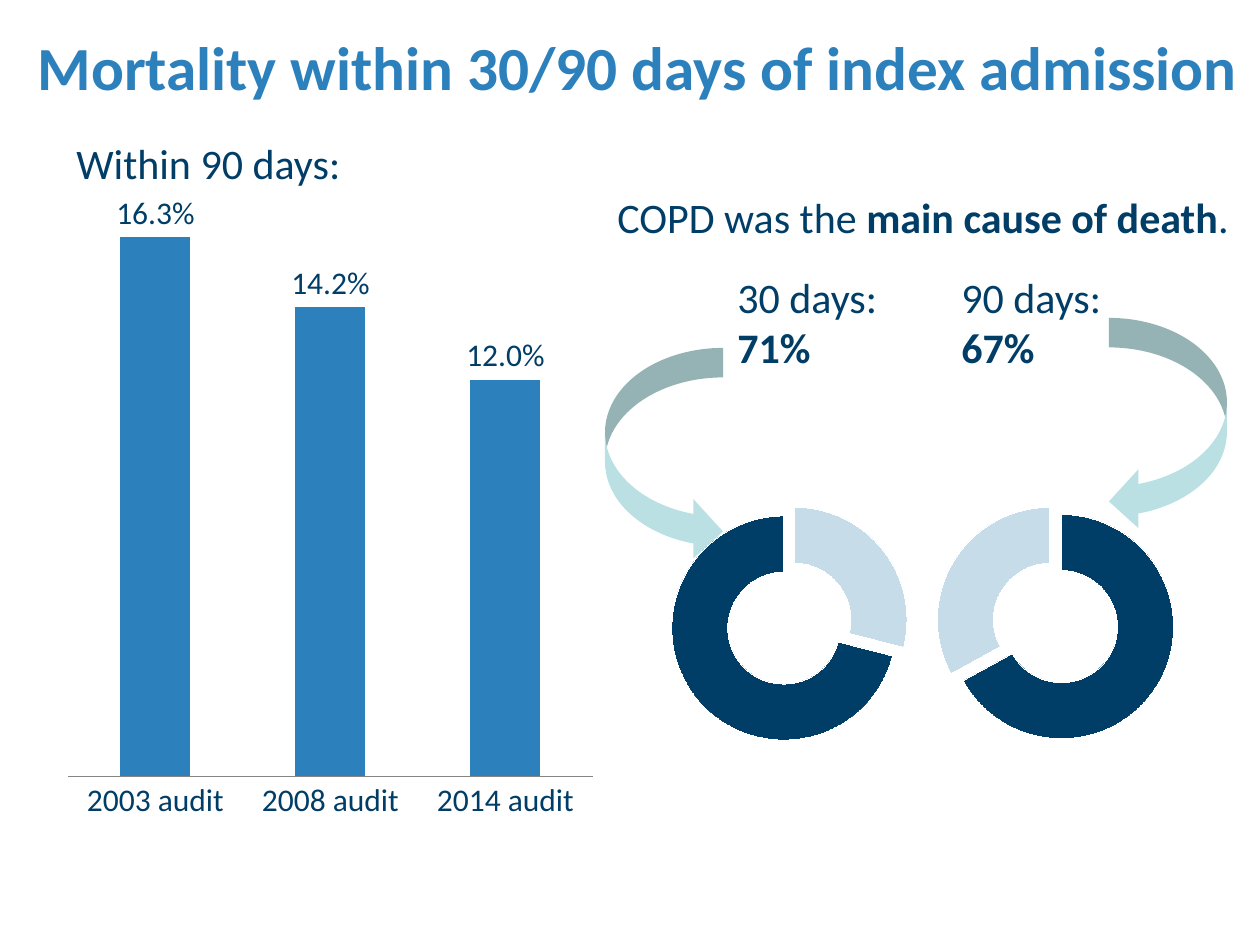
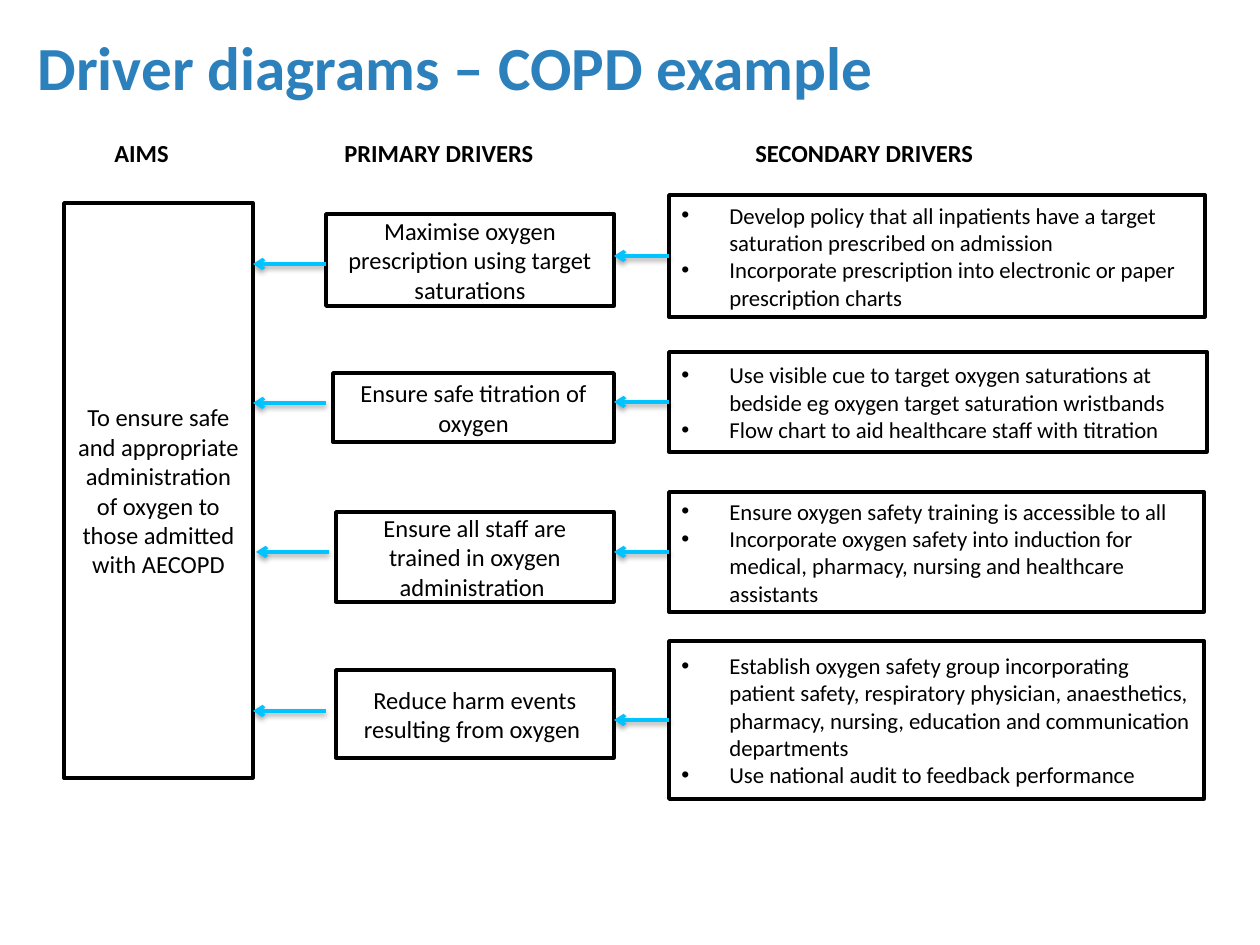
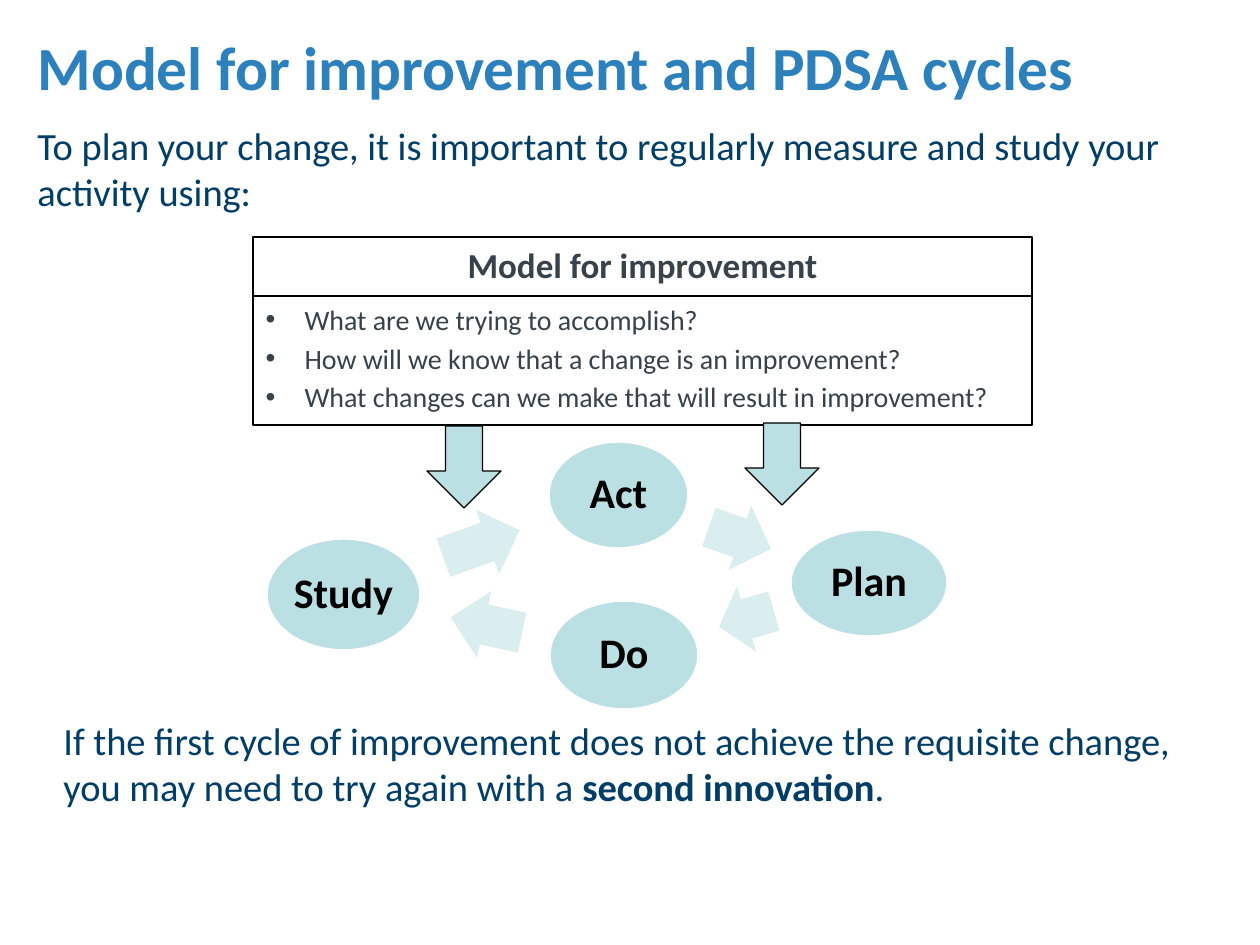
from typing import NamedTuple, Optional

from pptx import Presentation
from pptx.chart.data import CategoryChartData
from pptx.dml.color import RGBColor
from pptx.enum.chart import XL_CHART_TYPE, XL_LABEL_POSITION, XL_TICK_MARK
from pptx.enum.shapes import MSO_CONNECTOR, MSO_SHAPE
from pptx.enum.text import MSO_ANCHOR, MSO_AUTO_SIZE, PP_ALIGN
from pptx.oxml import parse_xml
from pptx.oxml.ns import nsdecls, qn
from pptx.util import Emu, Pt

# Shared look
FONT = "Calibri"
BLUE = RGBColor(0x2C, 0x81, 0xBD)
NAVY = RGBColor(0x00, 0x3D, 0x67)
PALE = RGBColor(0xC7, 0xDC, 0xE9)
TEAL = RGBColor(0xBB, 0xE0, 0xE3)
MIST = RGBColor(0xDA, 0xED, 0xEF)
CYAN = RGBColor(0x00, 0xC3, 0xFF)
SLATE = RGBColor(0x37, 0x42, 0x4A)
GREY = RGBColor(0x86, 0x86, 0x86)
BLACK = RGBColor(0, 0, 0)
WHITE = RGBColor(0xFF, 0xFF, 0xFF)
DPI = 126


class Area(NamedTuple):
    left: int
    top: int
    width: int
    height: int


class Style(NamedTuple):
    size: int
    color: RGBColor = BLACK
    bold: Optional[bool] = None
    align: PP_ALIGN = PP_ALIGN.LEFT
    spacing: Optional[float] = None
    indent: int = 0
    before: int = 0


class Driver(NamedTuple):
    main: Area
    goal: str
    side: Area
    steps: list[str]
    tip: int
    level: int


class Ring(NamedTuple):
    area: Area
    values: tuple[int, int]
    dark: int


class Stage(NamedTuple):
    name: str
    area: Area
    arrow: Area
    turn: float


TITLE = Style(35, BLUE, True, spacing=0.8)
NOTE = Style(24, NAVY)
PROSE = Style(22, NAVY)
HEAD = Style(14, bold=True)
GOAL = Style(14, align=PP_ALIGN.CENTER)
STEP = Style(13, indent=48)
MODEL = Style(20, SLATE, True, PP_ALIGN.CENTER)
QUERY = Style(16, SLATE, indent=39, before=3)
STAGE = Style(24, bold=True, align=PP_ALIGN.CENTER, spacing=0.9)


def px(count: int) -> Emu:
    return Emu(round(count * 914400 / DPI))


def box(area: Area) -> list[Emu]:
    return [px(side) for side in area]


# Text; words between asterisks are bold
def write(frame, lines: list[str], style: Style, anchor=MSO_ANCHOR.TOP, tabs=()) -> None:
    frame.word_wrap = True
    frame.auto_size = MSO_AUTO_SIZE.NONE
    frame.vertical_anchor = anchor
    for row, line in enumerate(lines):
        para = frame.add_paragraph() if row else frame.paragraphs[0]
        for spot, words in enumerate(line.split("*")):
            run = para.add_run()
            run.text = words
            if spot % 2:
                run.font.bold = True
        props = para._p.get_or_add_pPr()
        if style.indent:
            props.set("marL", str(px(style.indent)))
            props.set("indent", str(-px(style.indent)))
            props.append(parse_xml(f'<a:buFont {nsdecls("a")} typeface="Arial"/>'))
            props.append(parse_xml(f'<a:buChar {nsdecls("a")} char="•"/>'))
        if tabs:
            stops = "".join(f'<a:tab pos="{px(stop)}" algn="l"/>' for stop in tabs)
            props.append(parse_xml(f'<a:tabLst {nsdecls("a")}>{stops}</a:tabLst>'))
        para.alignment = style.align
        para.space_before = Pt(style.before if row else 0)
        if style.spacing:
            para.line_spacing = style.spacing
        font = para.font
        font.name, font.size, font.color.rgb = FONT, Pt(style.size), style.color
        if style.bold is not None:
            font.bold = style.bold


def add_text(slide, area: Area, line: str, style: Style, tabs=()) -> None:
    write(slide.shapes.add_textbox(*box(area)).text_frame, [line], style, tabs=tabs)


def add_shape(slide, kind: MSO_SHAPE, area: Area, fill: Optional[RGBColor] = None,
              line: Optional[RGBColor] = None, weight: float = 2):
    shape = slide.shapes.add_shape(kind, *box(area))
    shape.shadow.inherit = False
    if fill is None:
        shape.fill.background()
    else:
        shape.fill.solid()
        shape.fill.fore_color.rgb = fill
    if line is None:
        shape.line.fill.background()
    else:
        shape.line.color.rgb = line
        shape.line.width = Pt(weight)
    return shape


def add_panel(slide, area: Area, lines: list[str], style: Style):
    panel = add_shape(slide, MSO_SHAPE.RECTANGLE, area, WHITE, BLACK)
    write(panel.text_frame, lines, style, MSO_ANCHOR.MIDDLE)
    return panel


def add_arrow(slide, start: int, end: int, level: int):
    arrow = slide.shapes.add_connector(
        MSO_CONNECTOR.STRAIGHT, px(start), px(level), px(end), px(level))
    arrow.line.color.rgb = CYAN
    arrow.line.width = Pt(2)
    props = arrow.element.spPr
    props.find(qn("a:ln")).append(parse_xml(f'<a:tailEnd {nsdecls("a")} type="arrow"/>'))
    props.append(parse_xml(
        f'<a:effectLst {nsdecls("a")}>'
        '<a:outerShdw blurRad="40000" dist="20000" dir="5400000" rotWithShape="0">'
        '<a:srgbClr val="000000"><a:alpha val="38000"/></a:srgbClr>'
        '</a:outerShdw></a:effectLst>'))
    return arrow


def add_slide(deck, title: str, layout: int = 5):
    slide = deck.slides.add_slide(deck.slide_layouts[layout])
    head = slide.shapes.title
    head.left, head.top, head.width, head.height = box(Area(25, 37, 1230, 116))
    write(head.text_frame, [title], TITLE)
    return slide


# Charts
def add_chart(slide, kind: XL_CHART_TYPE, area: Area, names, values, code="General"):
    data = CategoryChartData(number_format=code)
    data.categories = names
    data.add_series("Series 1", values)
    chart = slide.shapes.add_chart(kind, *box(area), data).chart
    chart.has_title = chart.has_legend = False
    chart.font.name, chart.font.size, chart.font.color.rgb = FONT, Pt(18), BLACK
    return chart


def add_bars(slide) -> None:
    chart = add_chart(slide, XL_CHART_TYPE.COLUMN_CLUSTERED, Area(57, 168, 547, 665),
                      ["2003 audit", "2008 audit", "2014 audit"],
                      (0.163, 0.142, 0.12), "0.0%")
    plot = chart.plots[0]
    plot.gap_width, plot.overlap, plot.vary_by_categories = 150, -25, False
    fill = plot.series[0].format.fill
    fill.solid()
    fill.fore_color.rgb = BLUE
    plot.has_data_labels = True
    labels = plot.data_labels
    labels.show_value = True
    labels.number_format, labels.number_format_is_linked = "0.0%", False
    labels.position = XL_LABEL_POSITION.OUTSIDE_END
    labels.font.name, labels.font.size, labels.font.color.rgb = FONT, Pt(18), NAVY

    scale = chart.value_axis
    scale.minimum_scale, scale.maximum_scale = 0, 0.18
    scale.has_major_gridlines = scale.visible = False
    axis = chart.category_axis
    axis.major_tick_mark = axis.minor_tick_mark = XL_TICK_MARK.NONE
    axis.format.line.color.rgb = GREY
    font = axis.tick_labels.font
    font.name, font.size, font.color.rgb = FONT, Pt(18), NAVY

    # Fixed plot area, as shares of the chart
    field = chart._chartSpace.find(".//" + qn("c:plotArea"))
    for old in field.findall(qn("c:layout")):
        field.remove(old)
    shares = "".join(f'<c:{key} val="{share}"/>' for key, share in
                     (("x", 0.02), ("y", 0.02), ("w", 0.96), ("h", 0.895)))
    field.insert(0, parse_xml(
        f'<c:layout {nsdecls("c")}><c:manualLayout><c:layoutTarget val="inner"/>'
        f'<c:xMode val="edge"/><c:yMode val="edge"/>{shares}</c:manualLayout></c:layout>'))


def add_ring(slide, ring: Ring) -> None:
    chart = add_chart(slide, XL_CHART_TYPE.DOUGHNUT_EXPLODED, ring.area,
                      ["1", "2"], ring.values)
    plot = chart.plots[0]
    plot.has_data_labels = False
    series = plot.series[0]
    for old in series._element.findall(qn("c:explosion")):
        series._element.remove(old)
    for spot in range(2):
        look = series.points[spot].format
        look.fill.solid()
        look.fill.fore_color.rgb = NAVY if spot == ring.dark else PALE
        look.line.color.rgb = WHITE
    part = series._element.findall(qn("c:dPt"))[ring.dark]
    part.find(qn("c:spPr")).addprevious(
        parse_xml(f'<c:explosion {nsdecls("c")} val="25"/>'))


RINGS = [
    Ring(Area(643, 476, 304, 287), (29, 71), 1),
    Ring(Area(896, 476, 307, 287), (67, 33), 0),
]

DRIVERS = [
    Driver(Area(326, 214, 288, 92), "Maximise oxygen prescription using target saturations",
           Area(669, 195, 536, 122),
           ["Develop policy that all inpatients have a target saturation prescribed on admission",
            "Incorporate prescription into electronic or paper prescription charts"],
           253, 264),
    Driver(Area(333, 373, 281, 69), "Ensure safe titration of oxygen",
           Area(669, 352, 538, 100),
           ["Use visible cue to target oxygen saturations at bedside eg oxygen target "
            "saturation wristbands",
            "Flow chart to aid healthcare staff with titration"],
           253, 403),
    Driver(Area(336, 512, 278, 90), "Ensure all staff are trained in oxygen administration ",
           Area(669, 492, 535, 120),
           ["Ensure oxygen safety training is accessible to all",
            "Incorporate oxygen safety into induction for medical, pharmacy, nursing "
            "and healthcare assistants"],
           256, 552),
    Driver(Area(336, 670, 278, 88), "Reduce harm events resulting from oxygen ",
           Area(669, 641, 535, 158),
           ["Establish oxygen safety group incorporating patient safety, respiratory "
            "physician, anaesthetics, pharmacy, nursing, education and communication "
            "departments",
            "Use national audit to feedback performance"],
           253, 711),
]

# Each stage with the arrow that leaves it
STAGES = [
    Stage("Act", Area(548, 441, 141, 108), Area(707, 504, 66, 68), 19.4),
    Stage("Plan", Area(790, 529, 158, 108), Area(718, 585, 57, 68), 163.8),
    Stage("Do", Area(549, 600, 150, 110), Area(450, 591, 73, 68), 192),
    Stage("Study", Area(266, 538, 155, 113), Area(441, 510, 81, 68), 340.2),
]


def mortality(deck) -> None:
    slide = add_slide(deck, "Mortality within 30/90 days of index admission")
    add_bars(slide)
    add_text(slide, Area(605, 185, 644, 63), "COPD was the *main cause of death*.", NOTE)
    for area in (Area(605, 348, 118, 213), Area(1109, 318, 118, 213)):
        curve = add_shape(slide, MSO_SHAPE.CURVED_RIGHT_ARROW, area, TEAL)
    curve.element.spPr.find(qn("a:xfrm")).set("flipH", "1")
    for ring in RINGS:
        add_ring(slide, ring)
    add_text(slide, Area(725, 265, 171, 115), "30 days: *71%*", NOTE)
    add_text(slide, Area(949, 265, 218, 165), "90 days: *67%*", NOTE)
    add_text(slide, Area(64, 131, 427, 63), "Within 90 days:", NOTE)


def diagram(deck) -> None:
    slide = add_slide(deck, "Driver diagrams – COPD example")
    add_text(slide, Area(64, 132, 1071, 43), "\tAIMS\tPRIMARY DRIVERS\tSECONDARY DRIVERS",
             HEAD, tabs=(38, 268, 679))
    add_panel(slide, Area(64, 203, 189, 575),
              ["To ensure safe and appropriate administration of oxygen to those "
               "admitted with AECOPD"], GOAL)
    for item in DRIVERS:
        add_panel(slide, item.main, [item.goal], GOAL)
        side = add_panel(slide, item.side, item.steps, STEP)
        middle = item.side.top + item.side.height // 2
        link = add_arrow(slide, item.side.left, 614, middle)
        link.begin_connect(side, 1)
        add_arrow(slide, item.tip + 73, item.tip, item.level)


def cycle(deck) -> None:
    slide = add_slide(deck, "Model for improvement and PDSA cycles", layout=1)
    add_text(slide, Area(25, 116, 1181, 106),
             "To plan your change, it is important to regularly measure and study "
             "your activity using:", PROSE)

    # Model box: heading over questions
    head = add_shape(slide, MSO_SHAPE.RECTANGLE, Area(253, 237, 779, 59),
                     line=BLACK, weight=1.5)
    write(head.text_frame, ["Model for improvement"], MODEL)
    body = slide.placeholders[1]
    body.left, body.top, body.width, body.height = box(Area(253, 296, 779, 129))
    body.line.color.rgb = BLACK
    body.line.width = Pt(1.5)
    write(body.text_frame,
          ["What are we trying to accomplish?",
           "How will we know that a change is an improvement?",
           "What changes can we make that will result in improvement?"], QUERY)

    # Cycle
    for stage in STAGES:
        oval = add_shape(slide, MSO_SHAPE.OVAL, stage.area, TEAL, WHITE)
        frame = oval.text_frame
        write(frame, [stage.name], STAGE, MSO_ANCHOR.MIDDLE)
        frame.word_wrap = False
        frame.margin_left = frame.margin_right = px(4)
        frame.margin_top = frame.margin_bottom = px(4)
        arrow = add_shape(slide, MSO_SHAPE.RIGHT_ARROW, stage.arrow, MIST)
        arrow.adjustments[0], arrow.adjustments[1] = 0.6, 0.5
        arrow.rotation = stage.turn
    for left, top in ((427, 426), (745, 423)):
        add_shape(slide, MSO_SHAPE.DOWN_ARROW, Area(left, top, 74, 82), TEAL, BLACK, 0.75)
    add_text(slide, Area(51, 711, 1191, 106),
             "If the first cycle of improvement does not achieve the requisite change, "
             "you may need to try again with a *second innovation*.", PROSE)


def main() -> None:
    deck = Presentation()
    deck.slide_width, deck.slide_height = px(1260), px(945)
    mortality(deck)
    diagram(deck)
    cycle(deck)
    deck.save("out.pptx")


if __name__ == "__main__":
    main()
